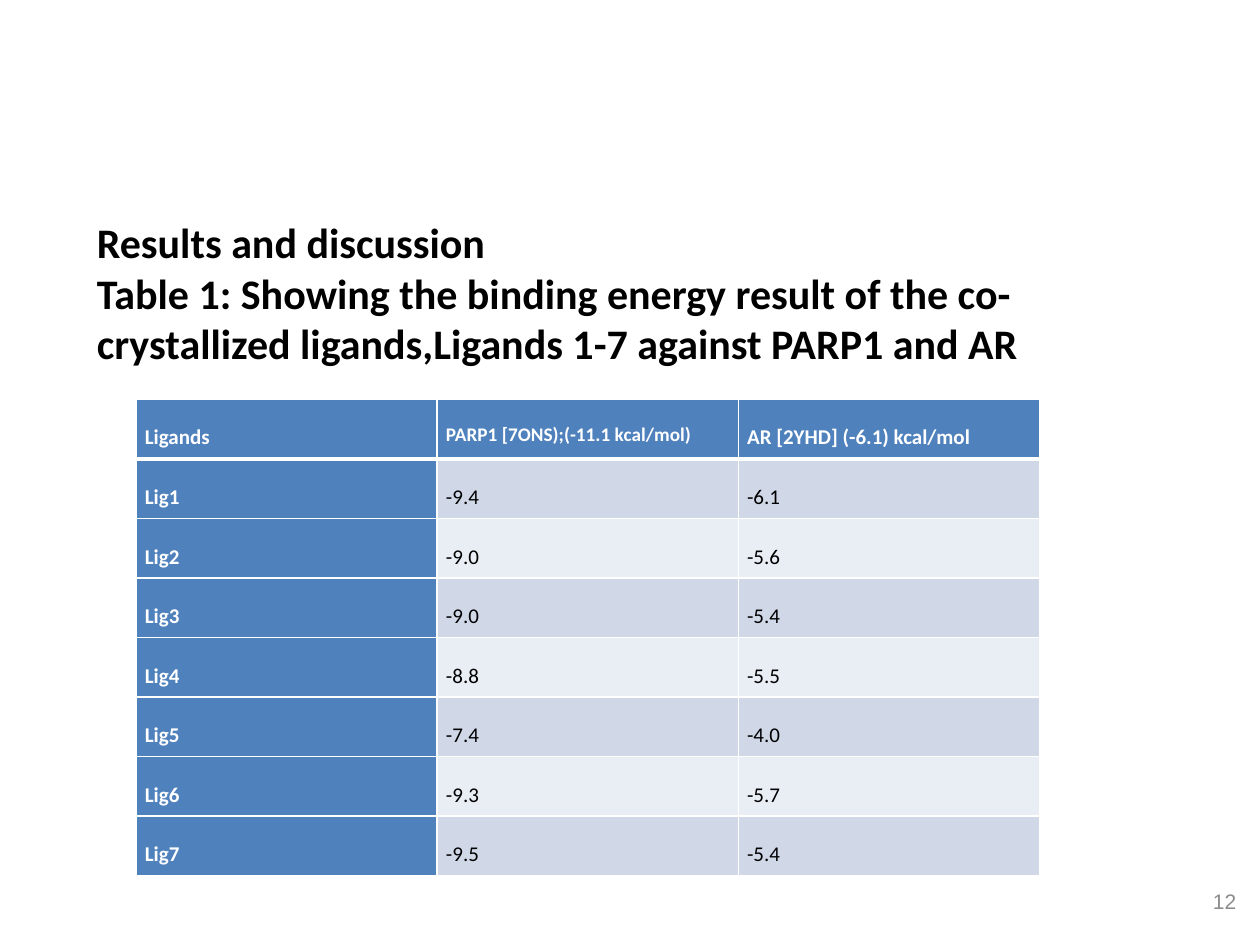
from dataclasses import dataclass

from lxml import etree
from pptx import Presentation
from pptx.dml.color import RGBColor
from pptx.enum.text import MSO_ANCHOR, PP_ALIGN
from pptx.oxml.ns import qn
from pptx.util import Inches, Pt

LEFT, RIGHT, EVEN = PP_ALIGN.LEFT, PP_ALIGN.RIGHT, PP_ALIGN.JUSTIFY
TOP, MIDDLE = MSO_ANCHOR.TOP, MSO_ANCHOR.MIDDLE

COLORS = {
    "white": "FFFFFF",
    "black": "000000",
    "gray": "8C8C8C",
    "blue": "4F81BD",
    "dark": "D0D8E8",
    "light": "E9EDF4",
}


@dataclass
class Style:
    size: float
    color: str
    bold: bool = False
    face: str = "Calibri"
    align: PP_ALIGN = LEFT


@dataclass
class Label:
    lines: list[str]
    box: tuple[float, float, float, float]
    style: Style
    anchor: MSO_ANCHOR = TOP


LABELS = [
    Label(["12"], (7.58, 6.95, 2.33, 0.4),
          Style(12, "gray", face="Arial", align=RIGHT), MIDDLE),
    Label(["Results and discussion",
           "Table 1: Showing the binding energy result of the co-crystallized "
           "ligands,Ligands 1-7 against PARP1 and AR"],
          (0.67, 1.67, 8.92, 1.31), Style(24, "black", True)),
]

HEADS = ["Ligands", "PARP1 [7ONS);(-11.1 kcal/mol)", "AR [2YHD] (-6.1) kcal/mol"]
PARP = ["-9.4", "-9.0", "-9.0", "-8.8", "-7.4", "-9.3", "-9.5"]
AR = ["-6.1", "-5.6", "-5.4", "-5.5", "-4.0", "-5.7", "-5.4"]
ROWS = [HEADS] + [[f"Lig{n}", *pair] for n, pair in enumerate(zip(PARP, AR), 1)]


def rgb(name: str) -> RGBColor:
    return RGBColor.from_string(COLORS[name])


def format_text(para, style: Style) -> None:
    para.alignment = style.align
    font = para.font
    font.name, font.size, font.bold = style.face, Pt(style.size), style.bold
    font.color.rgb = rgb(style.color)


def add_label(slide, label: Label) -> None:
    frame = slide.shapes.add_textbox(*map(Inches, label.box)).text_frame
    frame.word_wrap = True
    frame.vertical_anchor = label.anchor
    frame.text = "\n".join(label.lines)
    for para in frame.paragraphs:
        format_text(para, label.style)


def add_edges(cell, row: int) -> None:
    props = cell._tc.get_or_add_tcPr()
    widths = {"L": 1, "R": 1, "T": 3 if row == 1 else 1, "B": 3 if row == 0 else 1}
    for side, width in widths.items():
        line = etree.SubElement(props, qn(f"a:ln{side}"), w=str(Pt(width)))
        fill = etree.SubElement(line, qn("a:solidFill"))
        etree.SubElement(fill, qn("a:srgbClr"), val=COLORS["white"])


def fill_cell(cell, text: str, row: int, col: int) -> None:
    add_edges(cell, row)
    head = row == 0 or col == 0
    band = "dark" if row % 2 else "light"
    cell.fill.solid()
    cell.fill.fore_color.rgb = rgb("blue" if head else band)
    cell.margin_left = cell.margin_right = Inches(0.07)
    cell.margin_top = cell.margin_bottom = 0
    cell.text = text
    para = cell.text_frame.paragraphs[0]
    para.line_spacing = 2.0
    size = 11 if (row, col) == (0, 1) else 12
    format_text(para, Style(size, "white" if head else "black", head, align=EVEN))


def add_grid(slide) -> None:
    box = map(Inches, (1.08, 3.17, 7.17, 3.78))
    table = slide.shapes.add_table(len(ROWS), len(HEADS), *box).table
    for row, texts in enumerate(ROWS):
        for col, text in enumerate(texts):
            fill_cell(table.cell(row, col), text, row, col)


def main() -> None:
    deck = Presentation()
    deck.slide_width, deck.slide_height = Inches(10), Inches(7.5)
    slide = deck.slides.add_slide(deck.slide_layouts[6])
    for label in LABELS:
        add_label(slide, label)
    add_grid(slide)
    deck.save("out.pptx")


if __name__ == "__main__":
    main()
